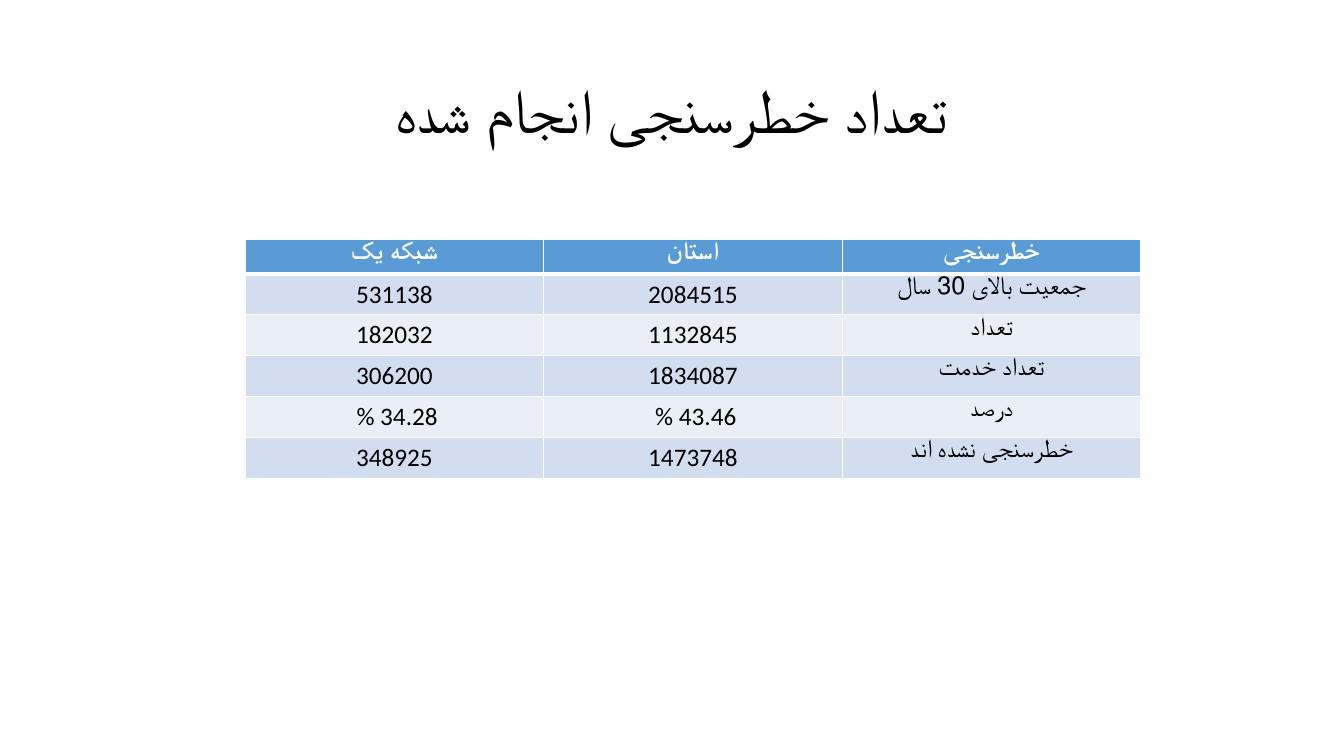
from lxml import etree
from pptx import Presentation
from pptx.dml.color import RGBColor
from pptx.enum.text import MSO_ANCHOR, PP_ALIGN
from pptx.oxml.ns import qn
from pptx.util import Pt

CENTER = PP_ALIGN.CENTER
MIDDLE = MSO_ANCHOR.MIDDLE
BLACK = RGBColor(0x00, 0x00, 0x00)
WHITE = RGBColor(0xFF, 0xFF, 0xFF)
HEADER_BLUE = RGBColor(0x5B, 0x9B, 0xD5)
BANDS = (RGBColor(0xEA, 0xEF, 0xF7), RGBColor(0xD2, 0xDE, 0xEF))

SCREENING = [
    ("شبکه یک", "استان", "خطرسنجی"),
    ("531138", "2084515", "جمعیت بالای 30 سال"),
    ("182032", "1132845", "تعداد"),
    ("306200", "1834087", "تعداد خدمت"),
    (" % 34.28", " % 43.46", "درصد"),
    ("348925", "1473748", "خطرسنجی نشده اند"),
]


class SlideBuilder:
    """Draws styled text and tables on one page."""

    def __init__(self, page, font="Calibri"):
        self.page = page
        self.font = font

    def set_text(self, para, text, size, color, bold=False):
        para.text = text
        para.alignment = CENTER
        para.font.name = self.font
        para.font.size = Pt(size)
        para.font.bold = bold
        para.font.color.rgb = color
        if any(letter.isalpha() for letter in text):
            para._p.get_or_add_pPr().set("rtl", "1")

    def title(self, text, left, top, width, height):
        box = self.page.shapes.add_textbox(Pt(left), Pt(top), Pt(width), Pt(height))
        frame = box.text_frame
        frame.word_wrap = True
        frame.vertical_anchor = MIDDLE
        self.set_text(frame.paragraphs[0], text, 44, BLACK)
        frame.paragraphs[0].line_spacing = 0.9

    def borders(self, cell, bottom, top):
        properties = cell._tc.get_or_add_tcPr()
        widths = {"a:lnL": 1, "a:lnR": 1, "a:lnT": top, "a:lnB": bottom}
        for index, (tag, width) in enumerate(widths.items()):
            line = etree.Element(qn(tag), w=str(Pt(width)))
            fill = etree.SubElement(line, qn("a:solidFill"))
            etree.SubElement(fill, qn("a:srgbClr"), val=str(WHITE))
            properties.insert(index, line)

    def table(self, rows, left, top, width, header_height, row_height):
        height = header_height + row_height * (len(rows) - 1)
        table = self.page.shapes.add_table(
            len(rows), len(rows[0]), Pt(left), Pt(top), Pt(width), Pt(height)
        ).table
        for column in table.columns:
            column.width = Pt(width / len(rows[0]))
        for r, texts in enumerate(rows):
            header = r == 0
            table.rows[r].height = Pt(header_height if header else row_height)
            for c, text in enumerate(texts):
                cell = table.cell(r, c)
                label = header or c == len(texts) - 1
                cell.margin_top = cell.margin_bottom = Pt(0 if label else 3.6)
                cell.fill.solid()
                cell.fill.fore_color.rgb = HEADER_BLUE if header else BANDS[r % 2]
                self.borders(cell, bottom=3 if header else 1, top=3 if r == 1 else 1)
                color = WHITE if header else BLACK
                self.set_text(cell.text_frame.paragraphs[0], text, 18, color, header)


def main():
    deck = Presentation()
    deck.slide_width, deck.slide_height = Pt(960), Pt(540)
    builder = SlideBuilder(deck.slides.add_slide(deck.slide_layouts[6]))
    builder.title("تعداد خطرسنجی انجام شده", 66, 28.75, 828, 104.4)
    builder.table(SCREENING, 175, 170.75, 640, 25, 29.2)
    deck.save("out.pptx")


if __name__ == "__main__":
    main()
